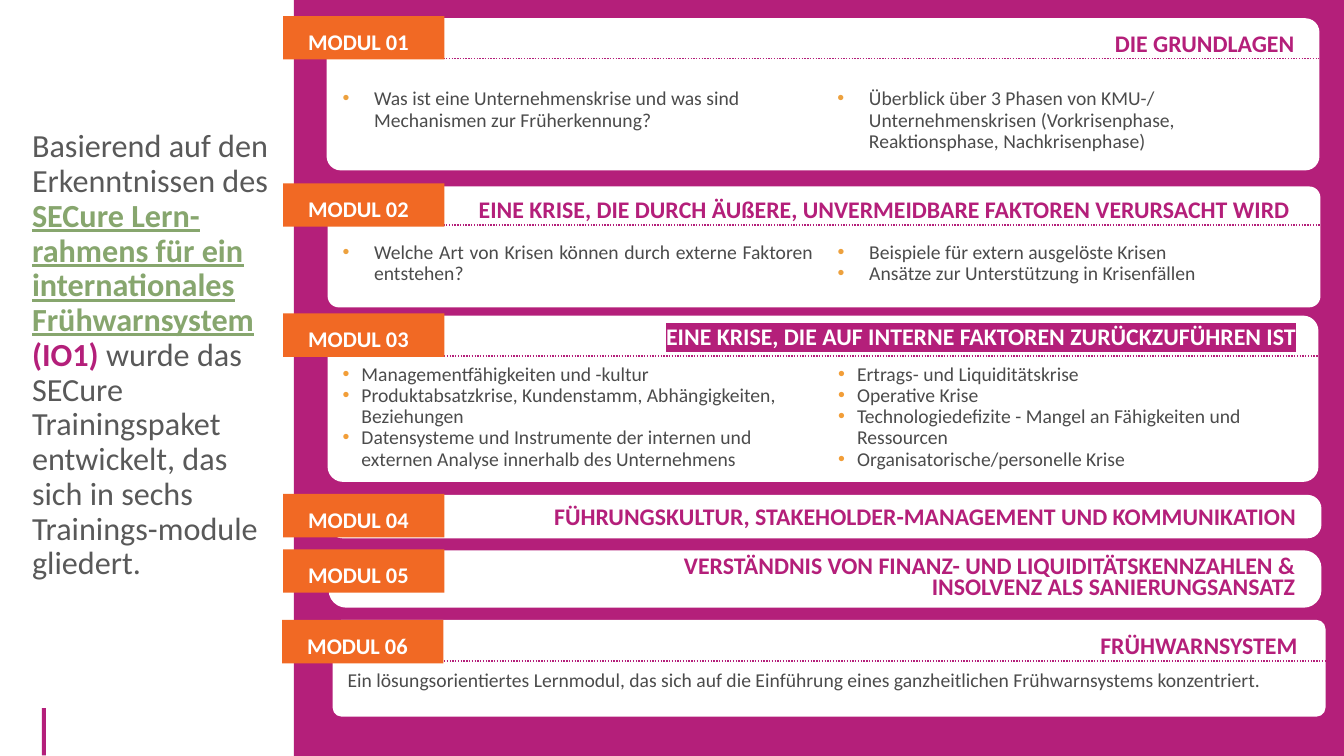
import pptx
import pptx.dml.color
import pptx.enum.dml
import pptx.enum.shapes
import pptx.enum.text
import pptx.oxml
import pptx.oxml.ns
import pptx.util
from dataclasses import dataclass, field
from typing import NamedTuple, Optional

Pt = pptx.util.Pt
SHAPE = pptx.enum.shapes.MSO_SHAPE
ALIGN = pptx.enum.text.PP_ALIGN
ANCHOR = pptx.enum.text.MSO_ANCHOR

COLORS = {
    "magenta": "B41F7A", "orange": "F16924", "white": "FFFFFF", "green": "87A66E",
    "intro": "595959", "body": "4B4B4B", "bullet": "EDA13E", "bullet_warm": "F29E38",
}
FONT = "Calibri"


class Box(NamedTuple):
    left: float
    top: float
    width: float
    height: float


class Rule(NamedTuple):
    start: float
    end: float
    y: float


@dataclass
class Body:
    box: Box
    items: list[str]
    columns: int = 1
    indent: float = 22.5
    bullet: Optional[str] = "bullet"
    align: ALIGN = ALIGN.LEFT


@dataclass
class Module:
    label: str
    title: str
    panel: Box
    tab: Box
    heading: Box
    radius: float = 0.093
    rule: Optional[Rule] = None
    bodies: list[Body] = field(default_factory=list)
    title_spacing: Optional[float] = None
    highlighted: bool = False


def tab_box(top: float, left: float = 202.3) -> Box:
    return Box(left, top, 115.2, 31)


MODULES = [
    Module("MODUL 01", "DIE GRUNDLAGEN", Box(233.3, 13, 709.2, 108.7), tab_box(11.5),
           Box(461.5, 16.6, 470.2, 28.1), rule=Rule(233.3, 942.5, 41.8),
           bodies=[
               Body(Box(237.6, 59.8, 350.6, 53),
                    ["Was ist eine Unternehmenskrise und was sind Mechanismen zur Früherkennung?"]),
               Body(Box(591.1, 59.8, 345, 53),
                    ["Überblick über 3 Phasen von KMU-/ Unternehmenskrisen (Vorkrisenphase, "
                     "Reaktionsphase, Nachkrisenphase)"])]),
    Module("MODUL 02", "EINE KRISE, DIE DURCH ÄUßERE, UNVERMEIDBARE FAKTOREN VERURSACHT WIRD ",
           Box(234, 133.2, 709.2, 86.4), tab_box(131),
           Box(326.2, 135.4, 606.2, 28.1), rule=Rule(233.3, 946.8, 160.6),
           bodies=[Body(Box(237.6, 169.2, 704.2, 50.4), [
               "Welche Art von Krisen können durch externe Faktoren entstehen?",
               "Beispiele für extern ausgelöste Krisen",
               "Ansätze zur Unterstützung in Krisenfällen",
           ], columns=2, align=ALIGN.JUSTIFY)]),
    Module("MODUL 03", "EINE KRISE, DIE AUF INTERNE FAKTOREN ZURÜCKZUFÜHREN IST",
           Box(234, 225.4, 707.8, 118.8), tab_box(223.9),
           Box(275, 226.1, 658.1, 28.1), rule=Rule(231.8, 941.8, 254.2), highlighted=True,
           bodies=[Body(Box(237.6, 256.3, 704.9, 81.4), [
               "Managementfähigkeiten und -kultur",
               "Produktabsatzkrise, Kundenstamm, Abhängigkeiten, Beziehungen",
               "Datensysteme und Instrumente der internen und externen Analyse "
               "innerhalb des Unternehmens",
               "Ertrags- und Liquiditätskrise",
               "Operative Krise",
               "Technologiedefizite - Mangel an Fähigkeiten und Ressourcen",
               "Organisatorische/personelle Krise",
           ], columns=2, indent=13.5, bullet="bullet_warm")]),
    Module("MODUL 04", "FÜHRUNGSKULTUR, STAKEHOLDER-MANAGEMENT UND KOMMUNIKATION",
           Box(234.7, 353.5, 709.2, 31), tab_box(352.8),
           Box(277.9, 355, 655.2, 28.1), radius=0.319),
    Module("MODUL 05", "VERSTÄNDNIS VON FINANZ- UND LIQUIDITÄTSKENNZAHLEN & "
           "INSOLVENZ ALS SANIERUNGSANSATZ",
           Box(234.7, 393.1, 709.2, 41), tab_box(392.4),
           Box(452.2, 394.6, 480.2, 38.2), radius=0.309, title_spacing=15.4),
    Module("MODUL 06", "FRÜHWARNSYSTEM", Box(237.6, 442.8, 709.2, 69.1),
           tab_box(442.8, 201.6),
           Box(280.1, 447.1, 653.8, 28.1), rule=Rule(231.8, 946.8, 472.3),
           bodies=[Body(Box(241.2, 475.2, 699.8, 41.8), [
               "Ein lösungsorientiertes Lernmodul, das sich auf die Einführung eines "
               "ganzheitlichen Frühwarnsystems konzentriert."],
               indent=0, bullet=None, align=ALIGN.JUSTIFY)]),
]


def rgb(name: str) -> pptx.dml.color.RGBColor:
    return pptx.dml.color.RGBColor.from_string(COLORS[name])


def element(parent, tag: str, **attrs: str):
    el = pptx.oxml.ns.qn(tag)
    child = parent.makeelement(el, attrs)
    parent.append(child)
    return child


def add_block(s, kind: SHAPE, box: Box, color: str):
    sp = s.shapes.add_shape(kind, *map(Pt, box))
    sp.shadow.inherit = False
    sp.fill.solid()
    sp.fill.fore_color.rgb = rgb(color)
    sp.line.fill.background()
    return sp


def add_text_box(s, box: Box):
    tf = s.shapes.add_textbox(*map(Pt, box)).text_frame
    tf.word_wrap = True
    return tf


def add_run(p, text: str, size: float, color: str, bold: bool = False,
            underline: bool = False):
    r = p.add_run()
    r.text = text
    r.font.size = Pt(size)
    r.font.bold = bold
    r.font.underline = underline
    r.font.color.rgb = rgb(color)
    r.font.name = FONT
    return r


def add_body(s, body: Body) -> None:
    tf = add_text_box(s, body.box)
    if body.columns > 1:
        props = tf._txBody.bodyPr
        props.set("numCol", str(body.columns))
        props.set("spcCol", str(Pt(17.3)))
    for i, item in enumerate(body.items):
        p = tf.paragraphs[0] if i == 0 else tf.add_paragraph()
        p.alignment = body.align
        p.line_spacing = Pt(15.2)
        if body.bullet:
            props = p._p.get_or_add_pPr()
            props.set("marL", str(Pt(body.indent)))
            props.set("indent", str(-Pt(body.indent)))
            element(element(props, "a:buClr"), "a:srgbClr", val=COLORS[body.bullet])
            element(props, "a:buFont", typeface="Arial")
            element(props, "a:buChar", char="•")
        add_run(p, item, 14, "body")


def add_rule(s, rule: Rule) -> None:
    line = s.shapes.add_connector(pptx.enum.shapes.MSO_CONNECTOR.STRAIGHT,
                                  Pt(rule.start), Pt(rule.y), Pt(rule.end), Pt(rule.y))
    line.line.color.rgb = rgb("magenta")
    line.line.width = Pt(1)
    line.line.dash_style = pptx.enum.dml.MSO_LINE.ROUND_DOT
    element(line._element.spPr, "a:effectLst")


def add_module(s, module: Module) -> None:
    panel = add_block(s, SHAPE.ROUNDED_RECTANGLE, module.panel, "white")
    panel.adjustments[0] = module.radius
    for body in module.bodies:
        add_body(s, body)
    if module.rule:
        add_rule(s, module.rule)

    tf = add_block(s, SHAPE.RECTANGLE, module.tab, "orange").text_frame
    tf.vertical_anchor = ANCHOR.MIDDLE
    p = tf.paragraphs[0]
    p.alignment = ALIGN.LEFT
    p.line_spacing = Pt(24.4)
    p._p.get_or_add_pPr().set("marL", str(Pt(10.8)))
    add_run(p, module.label, 16, "white", bold=True)

    p = add_text_box(s, module.heading).paragraphs[0]
    p.alignment = ALIGN.RIGHT
    if module.title_spacing:
        p.line_spacing = Pt(module.title_spacing)
    r = add_run(p, module.title, 17, "white" if module.highlighted else "magenta", bold=True)
    if module.highlighted:
        props = r._r.get_or_add_rPr()
        highlight = element(props, "a:highlight")
        element(highlight, "a:srgbClr", val=COLORS["magenta"])
        props.find(pptx.oxml.ns.qn("a:solidFill")).addnext(highlight)


def add_intro(s) -> None:
    p = add_text_box(s, Box(15.8, 89.3, 185.8, 353.5)).paragraphs[0]
    p.line_spacing = 0.9
    add_run(p, "Basierend auf den Erkenntnissen des ", 23, "intro")
    add_run(p, "SECure Lern-rahmens für ein internationales Frühwarnsystem ", 23, "green",
            bold=True, underline=True)
    add_run(p, "(IO1) ", 23, "magenta", bold=True)
    add_run(p, "wurde das SECure Trainingspaket entwickelt, das sich in sechs "
            "Trainings-module gliedert.", 23, "intro")


def main() -> None:
    prs = pptx.Presentation()
    prs.slide_width, prs.slide_height = Pt(960), Pt(540)
    s = prs.slides.add_slide(prs.slide_layouts[6])
    add_block(s, SHAPE.RECTANGLE, Box(29.9, 505.8, 2.9, 33.8), "magenta")
    add_block(s, SHAPE.RECTANGLE, Box(210, 0, 750, 540), "magenta")
    add_intro(s)
    for module in MODULES:
        add_module(s, module)
    prs.save("out.pptx")


if __name__ == "__main__":
    main()
